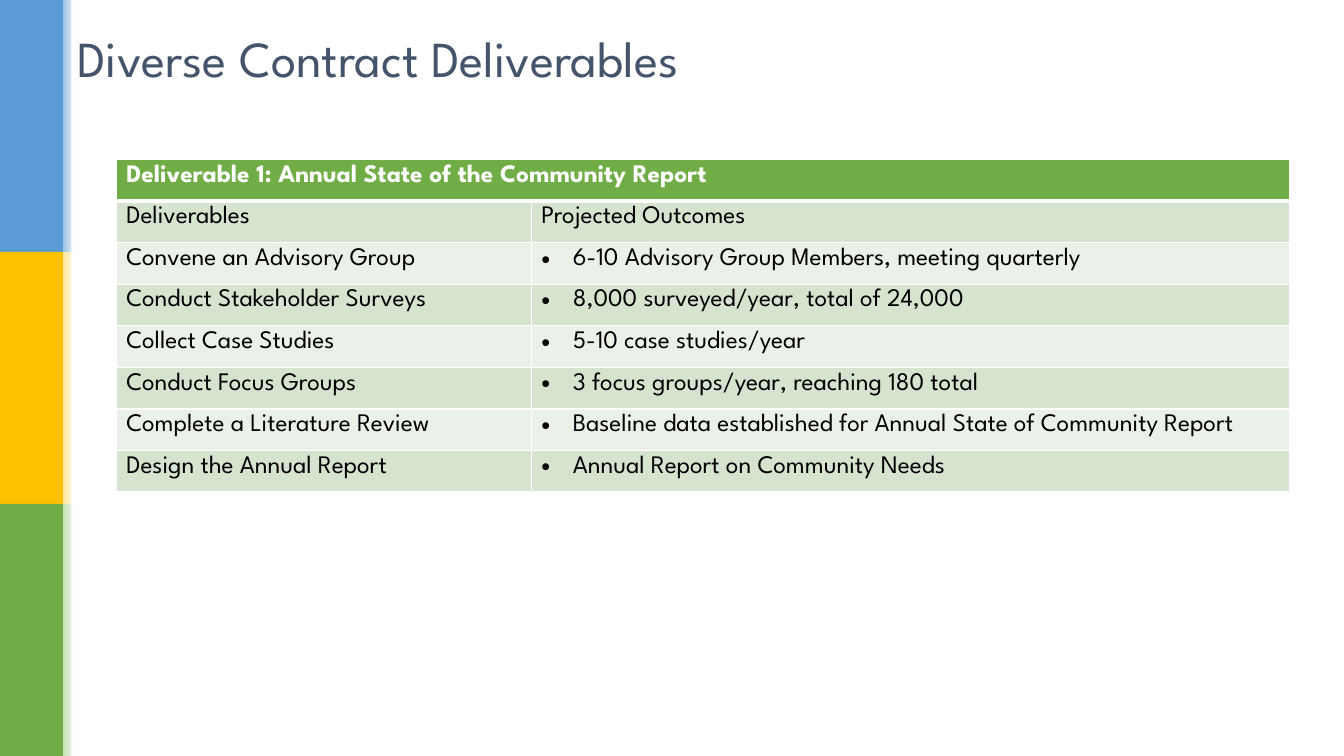
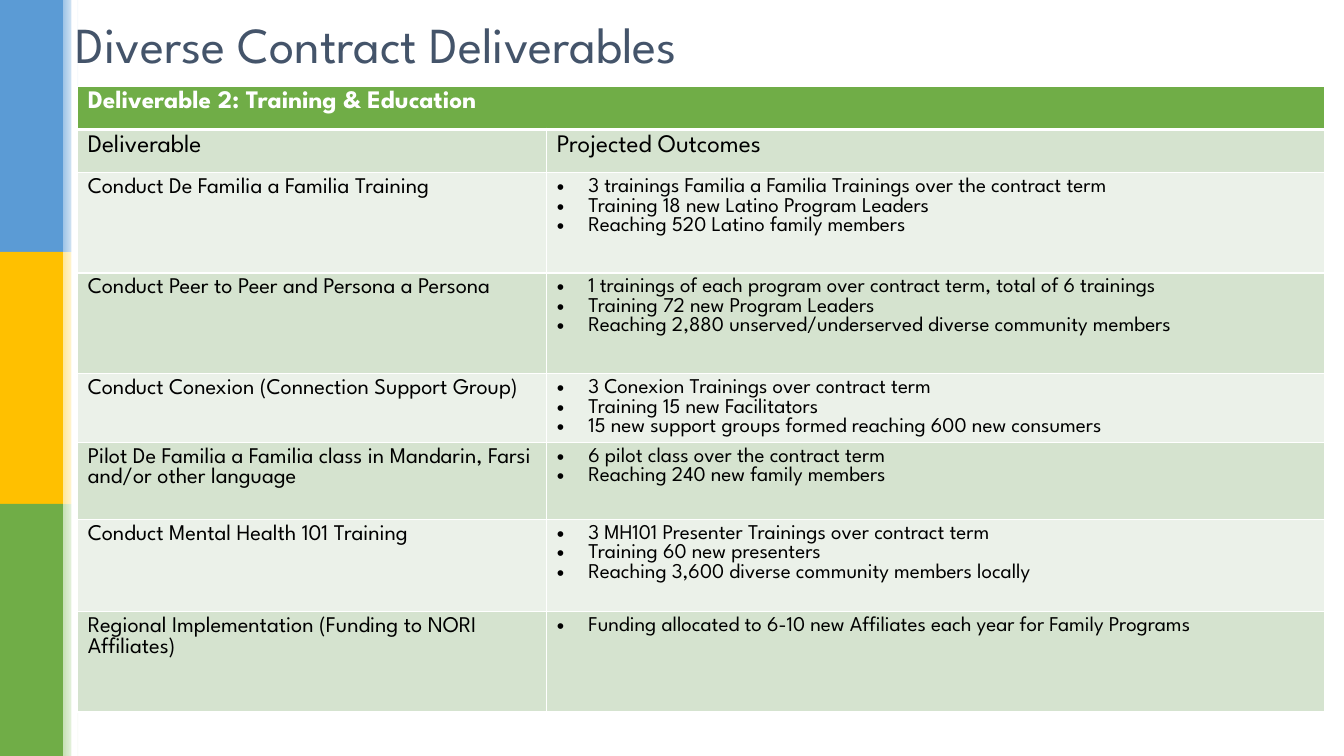
from pptx import Presentation
from pptx.dml.color import RGBColor
from pptx.enum.shapes import MSO_SHAPE
from pptx.enum.text import MSO_ANCHOR, PP_ALIGN
from pptx.oxml.ns import qn
from pptx.util import Pt
from lxml.etree import SubElement

FONT = "League Spartan"
COLORS = {name: RGBColor.from_string(code) for name, code in {
    "blue": "5B9BD5", "gold": "FFC000", "green": "70AD47",
    "pale_blue": "9DC3E6", "pale_gold": "FFE699", "pale_green": "C5E0B4",
    "title": "44546A", "text": "000000", "white": "FFFFFF",
    "row_dark": "D5E3CF", "row_light": "EBF1E9",
}.items()}
SLIDE_WIDTH, SLIDE_HEIGHT = 960, 540
BAND_HEIGHT = SLIDE_HEIGHT / 3
BAND_WIDTH, FADE_WIDTH = 45, 11.5
BULLET_INDENT = Pt(22.5)

deliverable_slides = [
    {
        "title_at": (48, 0),
        "table_at": (83, 114),
        "columns": (296.5, 542),
        "row_heights": [29.7] * 8,
        "body_sizes": (18, 18),
        "heading": "Deliverable 1: Annual State of the Community Report",
        "labels": ("Deliverables", "Projected Outcomes"),
        "rows": [
            ("Convene an Advisory Group", ["6-10 Advisory Group Members, meeting quarterly"]),
            ("Conduct Stakeholder Surveys", ["8,000 surveyed/year, total of 24,000"]),
            ("Collect Case Studies", ["5-10 case studies/year"]),
            ("Conduct Focus Groups", ["3 focus groups/year, reaching 180 total"]),
            ("Complete a Literature Review",
             ["Baseline data established for Annual State of Community Report"]),
            ("Design the Annual Report", ["Annual Report on Community Needs"]),
        ],
    },
    {
        "title_at": (47, -10),
        "table_at": (55.5, 61.5),
        "columns": (335, 556),
        "row_heights": [31, 31, 71.5, 72, 49, 55, 66, 71.5],
        "body_sizes": (16, 15),
        "heading": "Deliverable 2: Training & Education",
        "labels": ("Deliverable", "Projected Outcomes"),
        "rows": [
            ("Conduct De Familia a Familia Training",
             ["3 trainings Familia a Familia Trainings over the contract term",
              "Training 18 new Latino Program Leaders",
              "Reaching 520 Latino family members"]),
            ("Conduct Peer to Peer and Persona a Persona",
             ["1 trainings of each program over contract term, total of 6 trainings",
              "Training 72 new Program Leaders",
              "Reaching 2,880 unserved/underserved diverse community members"]),
            ("Conduct Conexion (Connection Support Group)",
             ["3 Conexion Trainings over contract term",
              "Training 15 new Facilitators",
              "15 new support groups formed reaching 600 new consumers"]),
            ("Pilot De Familia a Familia class in Mandarin, Farsi and/or other language",
             ["6 pilot class over the contract term",
              "Reaching 240 new family members"]),
            ("Conduct Mental Health 101 Training",
             ["3 MH101 Presenter Trainings over contract term",
              "Training 60 new presenters",
              "Reaching 3,600 diverse community members locally"]),
            ("Regional Implementation (Funding to NORI Affiliates)",
             ["Funding allocated to 6-10 new Affiliates each year for Family Programs"]),
        ],
    },
]


def format_text(paragraph, size, color, bold=False):
    for attribute, value in {"name": FONT, "size": Pt(size), "bold": bold}.items():
        setattr(paragraph.font, attribute, value)
    paragraph.font.color.rgb = COLORS[color]


def fill_cell(cell, lines, size, fill, color="text", bold=False, bulleted=False,
              top=1, bottom=1):
    """Write one paragraph per line and set white borders, top and bottom in points."""
    properties = cell._tc.get_or_add_tcPr()
    for side, width in {"lnL": 1, "lnR": 1, "lnT": top, "lnB": bottom}.items():
        border = SubElement(properties, qn(f"a:{side}"), w=str(Pt(width)))
        border_fill = SubElement(border, qn("a:solidFill"))
        SubElement(border_fill, qn("a:srgbClr"), val=str(COLORS["white"]))
    cell.fill.solid()
    cell.fill.fore_color.rgb = COLORS[fill]
    cell.text_frame.text = "\n".join(lines)
    for paragraph in cell.text_frame.paragraphs:
        if bulleted:
            layout_properties = paragraph._p.get_or_add_pPr()
            layout_properties.set("marL", str(BULLET_INDENT))
            layout_properties.set("indent", str(-BULLET_INDENT))
            SubElement(layout_properties, qn("a:buFont"), typeface="Arial")
            SubElement(layout_properties, qn("a:buChar"), char="•")
        format_text(paragraph, size, color, bold)


deck = Presentation()
deck.slide_width, deck.slide_height = Pt(SLIDE_WIDTH), Pt(SLIDE_HEIGHT)
title_only = deck.slide_layouts[5]
slides = [deck.slides.add_slide(title_only) for _ in deliverable_slides]

# Side bands: drawn once, then moved to the layout that all slides share
side_bands = []
for index, hue in enumerate(("blue", "gold", "green")):
    band_top = index * BAND_HEIGHT
    side_bands.append((0, band_top, BAND_WIDTH, BAND_HEIGHT, hue, False))
    side_bands.append((BAND_WIDTH, band_top, FADE_WIDTH, BAND_HEIGHT, f"pale_{hue}", True))
side_bands.append((51, 0, 4, SLIDE_HEIGHT, "white", False))

for index, (left, top, width, height, hue, fades) in enumerate(side_bands):
    band = slides[0].shapes.add_shape(
        MSO_SHAPE.RECTANGLE, Pt(left), Pt(top), Pt(width), Pt(height))
    band.shadow.inherit = False
    band.line.fill.background()
    if fades:
        band.fill.gradient()
        band.fill.gradient_angle = 0
        for stop, position, stop_hue in zip(band.fill.gradient_stops, (0, 1), (hue, "white")):
            stop.position = position
            stop.color.rgb = COLORS[stop_hue]
    else:
        band.fill.solid()
        band.fill.fore_color.rgb = COLORS[hue]
    band.element.nvSpPr.cNvPr.set("id", str(100 + index))
    title_only.shapes.element.insert(2 + index, band.element)

for slide, content in zip(slides, deliverable_slides):
    title = slide.shapes.title
    title.left, title.top = (Pt(value) for value in content["title_at"])
    title.width, title.height = Pt(828), Pt(82)
    title.text_frame.text = "Diverse Contract Deliverables"
    title.text_frame.vertical_anchor = MSO_ANCHOR.MIDDLE
    heading = title.text_frame.paragraphs[0]
    heading.alignment = PP_ALIGN.LEFT
    format_text(heading, 36, "title")

    left, top = content["table_at"]
    columns, row_heights = content["columns"], content["row_heights"]
    table = slide.shapes.add_table(
        len(row_heights), len(columns), Pt(left), Pt(top),
        Pt(sum(columns)), Pt(sum(row_heights))).table
    for column, width in zip(table.columns, columns):
        column.width = Pt(width)
    for row, height in zip(table.rows, row_heights):
        row.height = Pt(height)

    table.cell(0, 0).merge(table.cell(0, 1))
    fill_cell(table.cell(0, 0), [content["heading"]], 18, "green", "white", bold=True, bottom=3)
    for column, label in enumerate(content["labels"]):
        fill_cell(table.cell(1, column), [label], 18, "row_dark", top=3)
    deliverable_size, outcome_size = content["body_sizes"]
    for row, (deliverable, outcomes) in enumerate(content["rows"], start=2):
        fill = "row_dark" if row % 2 else "row_light"
        fill_cell(table.cell(row, 0), [deliverable], deliverable_size, fill)
        fill_cell(table.cell(row, 1), outcomes, outcome_size, fill, bulleted=True)

deck.save("out.pptx")
